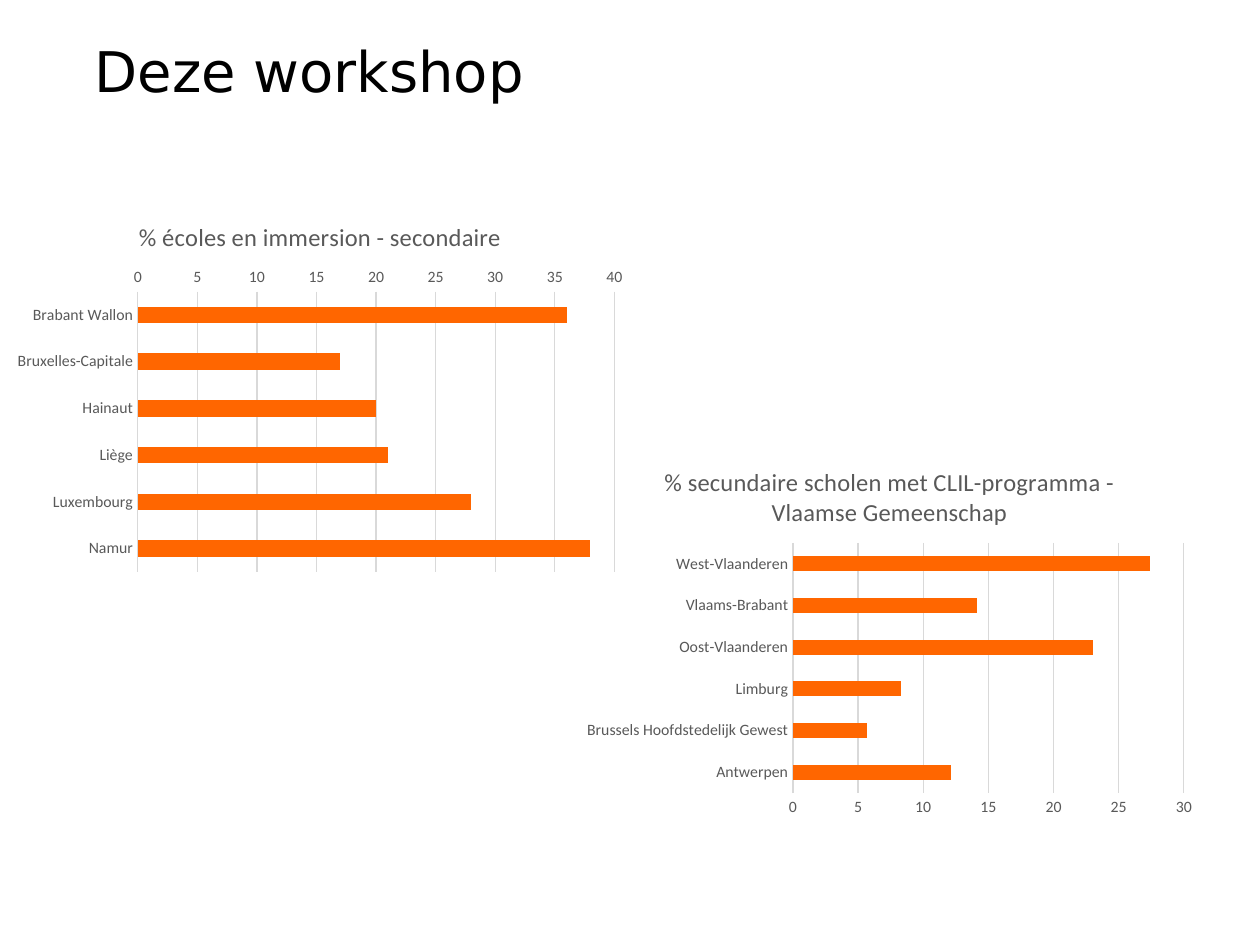
"""Build a slide with two bar charts on immersion and CLIL schools."""
from dataclasses import dataclass

from pptx import Presentation
from pptx import util as u
from pptx.chart import data as cd
from pptx.dml import color
from pptx.enum import chart as ec

FONT = "Calibri"
GREY = "595959"
PALE = "D9D9D9"


@dataclass
class Bars:
    title: str
    left: float
    top: float
    limit: int
    flip: bool
    rows: dict[str, float]


CHARTS = [
    Bars("% secundaire scholen met CLIL-programma - Vlaamse Gemeenschap",
         4.56, 3.54, 30, False,
         {"Antwerpen": 12.1, "Brussels Hoofdstedelijk Gewest": 5.7,
          "Limburg": 8.3, "Oost-Vlaanderen": 23,
          "Vlaams-Brabant": 14.1, "West-Vlaanderen": 27.4}),
    Bars("% écoles en immersion - secondaire",
         0.04, 1.6, 40, True,
         {"Brabant Wallon": 36, "Bruxelles-Capitale": 17, "Hainaut": 20,
          "Liège": 21, "Luxembourg": 28, "Namur": 38}),
]


def rgb(code: str) -> color.RGBColor:
    return color.RGBColor.from_string(code)


def set_font(font, name: str, size: float, code: str) -> None:
    font.name, font.size, font.bold = name, u.Pt(size), False
    font.color.rgb = rgb(code)


def set_line(line) -> None:
    line.color.rgb = rgb(PALE)
    line.width = u.Pt(0.75)


def draw_head(slide, words: str) -> None:
    box = slide.shapes.add_textbox(
        u.Inches(0.75), u.Inches(0.29), u.Inches(8.82), u.Inches(1.34))
    frame = box.text_frame
    frame.word_wrap = True
    frame.margin_left = frame.margin_right = 0
    frame.margin_top = frame.margin_bottom = 0
    frame.text = words
    set_font(frame.paragraphs[0].font, "DejaVu Sans", 32, "000000")


def draw_bars(slide, bars: Bars) -> None:
    data = cd.CategoryChartData()
    data.categories = list(bars.rows)
    data.add_series("Series 1", list(bars.rows.values()))
    chart = slide.shapes.add_chart(
        ec.XL_CHART_TYPE.BAR_CLUSTERED, u.Inches(bars.left),
        u.Inches(bars.top), u.Inches(5), u.Inches(3), data).chart
    set_font(chart.font, FONT, 10, "000000")
    chart.has_legend = False
    chart.has_title = True
    title = chart.chart_title
    title.include_in_layout = False
    title.text_frame.text = bars.title
    set_font(title.text_frame.paragraphs[0].font, FONT, 14, GREY)

    plot = chart.plots[0]
    plot.gap_width = 182
    plot.vary_by_categories = False
    fill = plot.series[0].format.fill
    fill.solid()
    fill.fore_color.rgb = rgb("FF6600")

    cats, vals = chart.category_axis, chart.value_axis
    for axis in (cats, vals):
        axis.major_tick_mark = axis.minor_tick_mark = ec.XL_TICK_MARK.NONE
        set_font(axis.tick_labels.font, FONT, 9, GREY)
    cats.reverse_order = bars.flip
    set_line(cats.format.line)
    vals.minimum_scale, vals.maximum_scale = 0, bars.limit
    vals.major_unit = 5
    vals.format.line.fill.background()
    set_line(vals.major_gridlines.format.line)


def main() -> None:
    deck = Presentation()
    deck.slide_width, deck.slide_height = u.Inches(10), u.Inches(7.5)
    slide = deck.slides.add_slide(deck.slide_layouts[6])
    draw_head(slide, "Deze workshop")
    for bars in CHARTS:
        draw_bars(slide, bars)
    deck.save("out.pptx")


if __name__ == "__main__":
    main()
